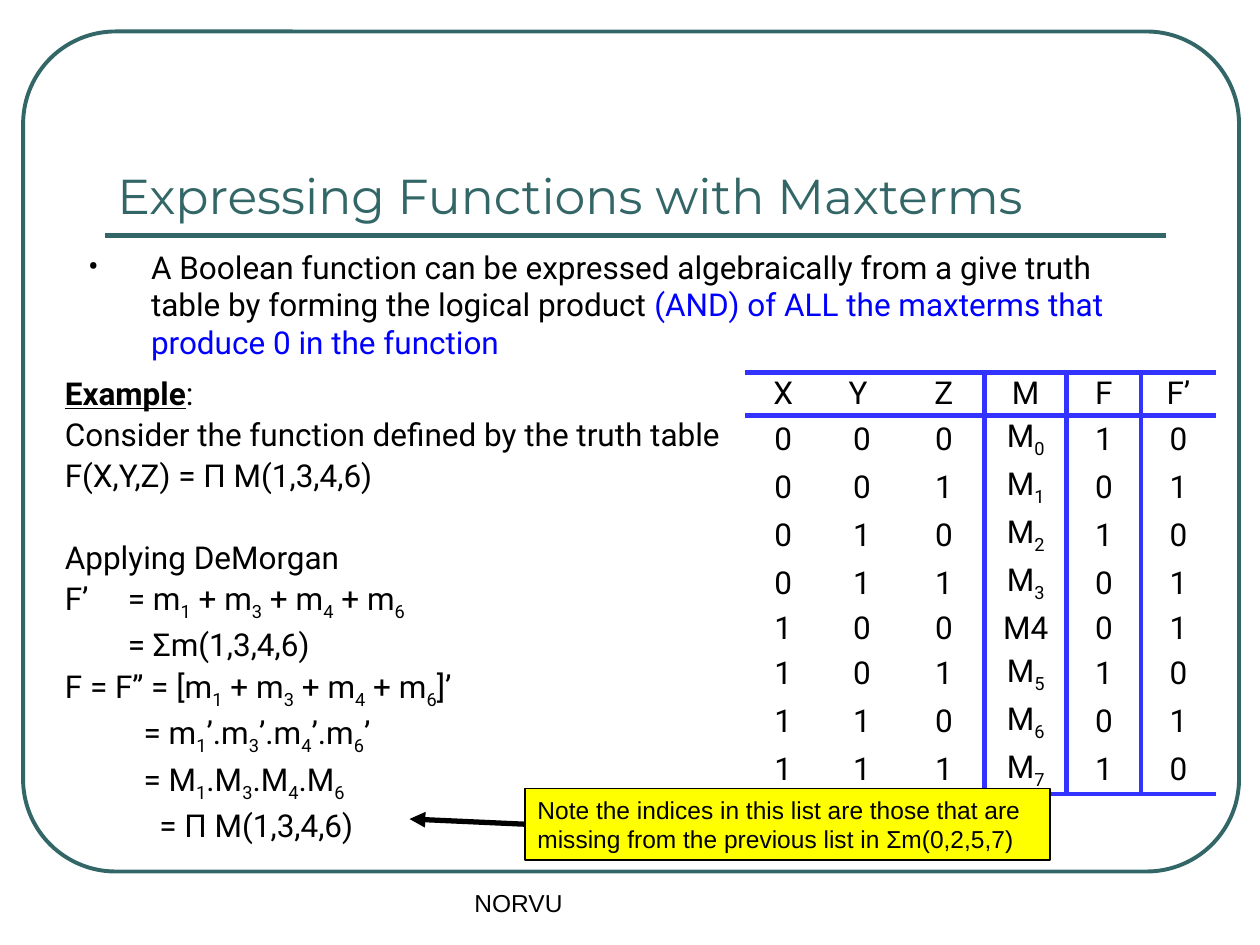
import pptx
import pptx.util
import pptx.dml.color
import pptx.enum.shapes
import pptx.enum.text
import pptx.oxml
import pptx.oxml.ns
import lxml.etree

COLORS = {"teal": "336666", "ink": "000000", "blue": "0000FF",
          "rule": "3333FF", "note": "FFFF00"}
UNIT = 1 / 12  # one column or row of the grid, in inches: 120 columns by 90 rows
PLAIN_TABLE_STYLE = "{2D5ABB26-0587-4C30-8999-92F81FD0307C}"  # no style, no grid
Pt = pptx.util.Pt
SHAPE = pptx.enum.shapes.MSO_SHAPE
ANCHOR = pptx.enum.text.MSO_ANCHOR
STRAIGHT = pptx.enum.shapes.MSO_CONNECTOR.STRAIGHT

TRUTH_TABLE = [
    ["X", "Y ", "Z", "M", "F", "F’"],
    ["0", "0", "0", "M_0", "1", "0"],
    ["0", "0", "1", "M_1", "0", "1"],
    ["0", "1", "0", "M_2", "1", "0"],
    ["0", "1", "1", "M_3", "0", "1"],
    ["1", "0", "0", "M4", "0", "1"],
    ["1", "0", "1", "M_5", "1", "0"],
    ["1", "1", "0", "M_6", "0", "1"],
    ["1", "1", "1", "M_7", "1", "0"],
]
COLUMN_WIDTHS = [7.2, 7.8, 7.8, 7.8, 7.1, 7.1]
RULED_COLUMNS = (2, 3, 4)  # columns with a rule on their right

# Text, left margin and first-line indent in grid units, space before in points
DERIVATION = [
    ("Consider the function defined by the truth table", 6, -6, 1),
    ("F(X,Y,Z) = Π M(1,3,4,6)", 6, -6, 1),
    ("Applying DeMorgan", 6, -6, 24),
    ("F’ \t= m_1 + m_3 + m_4 + m_6", 6, -6, 1),
    ("= Σm(1,3,4,6)", 6, 0, 1),
    ("F = F’’ = [m_1 + m_3 + m_4 + m_6]’", 6, -6, 1),
    ("= m_1’.m_3’.m_4’.m_6’", 7.5, 0, 1),
    ("= M_1.M_3.M_4.M_6", 7.5, 0, 1),
    ("= Π M(1,3,4,6)", 9, 0, 1),
]


def grid(units):
    return pptx.util.Inches(units * UNIT)


def rgb(name):
    return pptx.dml.color.RGBColor.from_string(COLORS[name])


def set_font(paragraph, name="Roboto", size=18, color="ink"):
    paragraph.font.name = name
    paragraph.font.size = Pt(size)
    paragraph.font.color.rgb = rgb(color)


def add_formula(paragraph, text):
    """Add text in which an underscore lowers the one digit after it."""
    plain, *lowered = text.split("_")
    paragraph.add_run().text = plain
    for piece in lowered:
        index = paragraph.add_run()
        index.text = piece[0]
        index._r.get_or_add_rPr().set("baseline", "-25000")
        if piece[1:]:
            paragraph.add_run().text = piece[1:]


def set_spacing(paragraph, margin, indent, before=1):
    paragraph.space_before, paragraph.space_after = Pt(before), Pt(1)
    properties = paragraph._p.get_or_add_pPr()
    properties.set("marL", str(grid(margin)))
    properties.set("indent", str(grid(indent)))


def add_text(slide, box, anchor=ANCHOR.TOP):
    frame = slide.shapes.add_textbox(*map(grid, box)).text_frame
    frame.word_wrap = True
    frame.vertical_anchor = anchor
    return frame


def add_line(slide, start, end, color):
    line = slide.shapes.add_connector(STRAIGHT, *map(grid, start + end))
    line.line.color.rgb = rgb(color)
    line.line.width = Pt(3)
    lxml.etree.SubElement(line._element.spPr, pptx.oxml.ns.qn("a:effectLst"))
    return line


def add_border(cell, side, ruled):
    paint = (f'<a:solidFill><a:srgbClr val="{COLORS["rule"]}"/></a:solidFill>'
             if ruled else "<a:noFill/>")
    border = pptx.oxml.parse_xml(
        f'<a:{side} {pptx.oxml.ns.nsdecls("a")} w="{Pt(3) if ruled else 0}">'
        f'{paint}</a:{side}>')
    cell._tc.get_or_add_tcPr().append(border)


def add_frame(slide, box):
    outline = slide.shapes.add_shape(SHAPE.ROUNDED_RECTANGLE, *map(grid, box))
    outline.adjustments[0] = 0.11
    outline.shadow.inherit = False
    outline.fill.background()
    outline.line.color.rgb = rgb("teal")
    outline.line.width = Pt(2.25)


def add_heading(slide, box):
    left, top, width, height = box
    underline = top + height + 0.4
    add_line(slide, (left, underline), (left + width, underline), "teal")
    title = add_text(slide, box, ANCHOR.BOTTOM).paragraphs[0]
    title.text = "Expressing Functions with Maxterms"
    set_font(title, "Montserrat", 28, "teal")


def add_statement(slide, box):
    statement = add_text(slide, box).paragraphs[0]
    statement.add_run().text = ("A Boolean function can be expressed algebraically from a "
                                "give truth table by forming the logical product ")
    rule = statement.add_run()
    rule.text = "(AND) of ALL the maxterms that produce 0 in the function"
    rule.font.color.rgb = rgb("blue")
    set_spacing(statement, 6, -6)
    for tag, key, value in (("a:buFont", "typeface", "Roboto"), ("a:buChar", "char", "•")):
        lxml.etree.SubElement(statement._p.pPr, pptx.oxml.ns.qn(tag)).set(key, value)
    set_font(statement)


def add_truth_table(slide, box):
    last = len(TRUTH_TABLE) - 1
    holder = slide.shapes.add_table(last + 1, len(COLUMN_WIDTHS), *map(grid, box))
    table = holder.table
    table.first_row = table.horz_banding = False
    table._tbl.tblPr.find(pptx.oxml.ns.qn("a:tableStyleId")).text = PLAIN_TABLE_STYLE
    for column, width in zip(table.columns, COLUMN_WIDTHS):
        column.width = grid(width)
    for r, values in enumerate(TRUTH_TABLE):
        table.rows[r].height = grid(2.3)  # rows grow to fit their text
        for c, value in enumerate(values):
            cell = table.cell(r, c)
            cell.margin_top = cell.margin_bottom = pptx.util.Inches(0.02)
            cell.vertical_anchor = ANCHOR.MIDDLE
            entry = cell.text_frame.paragraphs[0]
            entry.alignment = pptx.enum.text.PP_ALIGN.CENTER
            add_formula(entry, value)
            set_font(entry)
            # Borders come before the fill, in the order left, right, top, bottom
            sides = {"lnL": c - 1 in RULED_COLUMNS, "lnR": c in RULED_COLUMNS,
                     "lnT": r in (0, 1), "lnB": r in (0, last)}
            for side, ruled in sides.items():
                add_border(cell, side, ruled)
            cell.fill.background()
    holder.height = grid(box[3])


def add_derivation(slide, box):
    frame = add_text(slide, box)
    example = frame.paragraphs[0]
    label = example.add_run()
    label.text = "Example"
    label.font.bold = label.font.underline = True
    example.add_run().text = ":"
    set_spacing(example, 6, -6)
    set_font(example)
    for text, margin, indent, before in DERIVATION:
        step = frame.add_paragraph()
        add_formula(step, text)
        set_spacing(step, margin, indent, before)
        set_font(step)


def add_note(slide, box, target):
    note = slide.shapes.add_shape(SHAPE.RECTANGLE, *map(grid, box))
    note.shadow.inherit = False
    note.fill.solid()
    note.fill.fore_color.rgb = rgb("note")
    note.line.color.rgb = rgb("ink")
    note.line.width = Pt(0.75)
    frame = note.text_frame
    frame.vertical_anchor = ANCHOR.TOP
    frame.text = ("Note the indices in this list are those that are\n"
                  "missing from the previous list in Σm(0,2,5,7)")
    for sentence in frame.paragraphs:
        sentence.alignment = pptx.enum.text.PP_ALIGN.LEFT
        set_font(sentence, "Arial", 14)
    # Arrow from the note to the last step
    arrow = add_line(slide, box[:2], target, "ink")
    arrow.begin_connect(note, 1)
    head = lxml.etree.SubElement(arrow.line._get_or_add_ln(), pptx.oxml.ns.qn("a:tailEnd"))
    head.set("type", "triangle")


def add_footer(slide, box):
    footer = add_text(slide, box).paragraphs[0]
    footer.text = "NORVU"
    set_font(footer, "Arial", 14)


def main():
    deck = pptx.Presentation()
    deck.slide_width, deck.slide_height = grid(120), grid(90)
    slide = deck.slides.add_slide(deck.slide_layouts[6])
    add_frame(slide, (2.2, 3, 115.8, 80))
    add_heading(slide, (10, 7, 101, 15))
    add_footer(slide, (44, 84, 38, 6))
    add_statement(slide, (7.2, 23, 103.8, 9.7))
    add_truth_table(slide, (71, 35.5, sum(COLUMN_WIDTHS), 36.7))
    add_derivation(slide, (5, 35, 66, 44))
    add_note(slide, (50, 75.1, 50, 6.8), (39, 78))
    deck.save("out.pptx")


if __name__ == "__main__":
    main()
